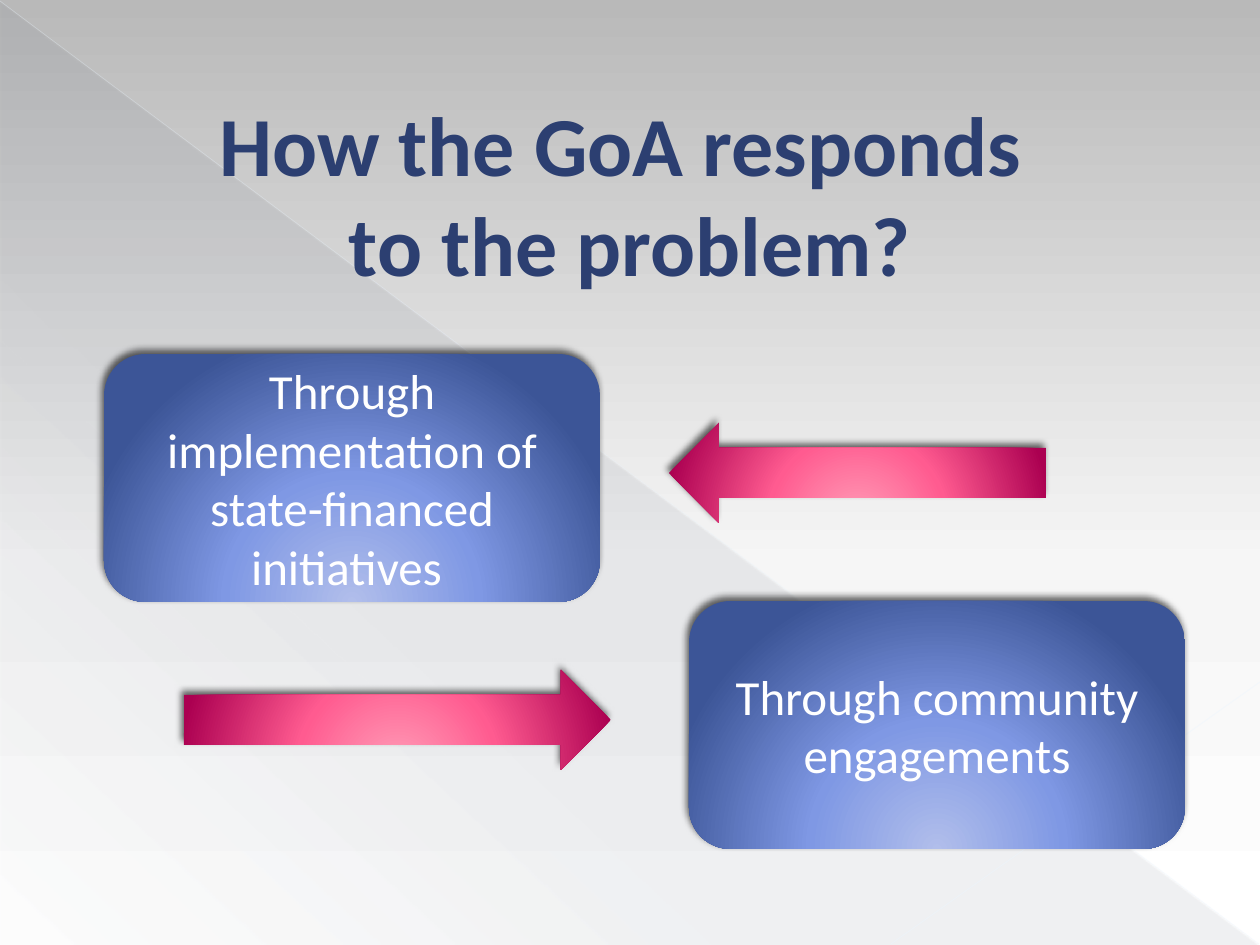
from lxml import etree
from pptx import Presentation
from pptx.dml.color import RGBColor
from pptx.enum.shapes import MSO_CONNECTOR, MSO_SHAPE as SHAPE
from pptx.enum.text import MSO_ANCHOR, MSO_AUTO_SIZE, PP_ALIGN
from pptx.oxml import parse_xml
from pptx.oxml.ns import nsdecls, qn
from pptx.util import Inches, Pt

PX = 7257  # EMU in one px, at 126 px to the inch
rgb = RGBColor.from_string

CIRCLE = ('<a:path path="circle"><a:fillToRect l="50000" t="155000" '
          'r="50000" b="-55000"/></a:path>')
BLUE = [(0, "B1BEEB", 100), (46, "7F98E4", 100), (100, "3C5597", 100)]
PINK = [(0, "FF9FB8", 100), (46, "FF5B90", 100), (100, "AB0051", 100)]
SHADOW = (f'<a:outerShdw {nsdecls("a")} blurRad="{Pt(4)}" dist="{Pt(3)}" '
          f'dir="{245 * 60000}" algn="ctr" rotWithShape="0">'
          '<a:srgbClr val="000000"><a:alpha val="60000"/></a:srgbClr></a:outerShdw>')


def set_gradient(fill, props, stops, direction):
    """Fill with stops of (position, colour, opacity), both in percent."""
    fill.solid()
    gs = "".join(
        f'<a:gs pos="{pos * 1000}"><a:srgbClr val="{color}">'
        f'<a:alpha val="{alpha * 1000}"/></a:srgbClr></a:gs>'
        for pos, color, alpha in stops)
    grad = parse_xml(f'<a:gradFill {nsdecls("a")} rotWithShape="1">'
                     f'<a:gsLst>{gs}</a:gsLst>{direction}</a:gradFill>')
    props.replace(props.find(qn("a:solidFill")), grad)


def write(tf, *lines, size, color, bold=False):
    for i, line in enumerate(lines):
        p = tf.paragraphs[0] if i == 0 else tf.add_paragraph()
        p.alignment = PP_ALIGN.CENTER
        r = p.add_run()
        r.text = line
        r.font.name = "Calibri"
        r.font.size = Pt(size)
        r.font.bold = bold
        r.font.color.rgb = rgb(color)


prs = Presentation()
prs.slide_width, prs.slide_height = Inches(10), Inches(7.5)
s = prs.slides.add_slide(prs.slide_layouts[6])

# Background: grey gradient, pale triangle and two hairlines
bg_fill = s.background.fill
bg_fill.solid()
set_gradient(bg_fill, s._element.find(".//" + qn("p:bgPr")),
             [(0, "B9B9B9", 100), (60, "F6F6F6", 100), (100, "FFFFFF", 100)],
             f'<a:lin ang="{90 * 60000}" scaled="0"/>')

triangle = s.shapes.add_shape(SHAPE.RIGHT_TRIANGLE, 1 * PX, 3 * PX, 1257 * PX, 942 * PX)
triangle.shadow.inherit = False
triangle.line.fill.background()
set_gradient(triangle.fill, triangle._element.spPr,
             [(0, "4E5B6F", 10), (70, "4E5B6F", 8), (100, "4E5B6F", 1)],
             f'<a:lin ang="{133 * 60000}" scaled="0"/>')

for x1, y1, x2, y2, color, width, alpha in [
    (0, 1, 1259, 944, "EAF5FF", 0.39, 35),
    (1260, 682, 891, 944, "ECF6FF", 0.47, 45),
]:
    line = s.shapes.add_connector(MSO_CONNECTOR.STRAIGHT,
                                  x1 * PX, y1 * PX, x2 * PX, y2 * PX)
    line.line.width = Pt(width)
    line.line.color.rgb = rgb(color)
    sp_pr = line._element.spPr
    clr = sp_pr.find(".//" + qn("a:srgbClr"))
    etree.SubElement(clr, qn("a:alpha")).set("val", str(alpha * 1000))
    etree.SubElement(sp_pr, qn("a:effectLst"))

# Title
title = s.shapes.add_textbox(203 * PX, 86 * PX, 854 * PX, 217 * PX)
tf = title.text_frame
tf.word_wrap = False
tf.auto_size = MSO_AUTO_SIZE.SHAPE_TO_FIT_TEXT
write(tf, "How the GoA responds ", "to the problem?", size=48, color="2C3F71", bold=True)

# Answer boxes and the arrows beside them
for kind, x, y, w, h, stops, text in [
    (SHAPE.ROUNDED_RECTANGLE, 104, 354, 496, 248, BLUE,
     "Through implementation of state-financed initiatives "),
    (SHAPE.ROUNDED_RECTANGLE, 689, 601, 496, 248, BLUE,
     "Through community engagements"),
    (SHAPE.LEFT_ARROW, 669, 423, 377, 100, PINK, None),
    (SHAPE.RIGHT_ARROW, 184, 670, 427, 100, PINK, None),
]:
    sp = s.shapes.add_shape(kind, x * PX, y * PX, w * PX, h * PX)
    sp.line.fill.background()
    sp.shadow.inherit = False
    sp_pr = sp._element.spPr
    set_gradient(sp.fill, sp_pr, stops, CIRCLE)
    sp_pr.find(qn("a:effectLst")).append(parse_xml(SHADOW))
    if text:
        tf = sp.text_frame
        tf.word_wrap = True
        tf.vertical_anchor = MSO_ANCHOR.MIDDLE
        write(tf, text, size=28, color="FFFFFF")

prs.save("out.pptx")
